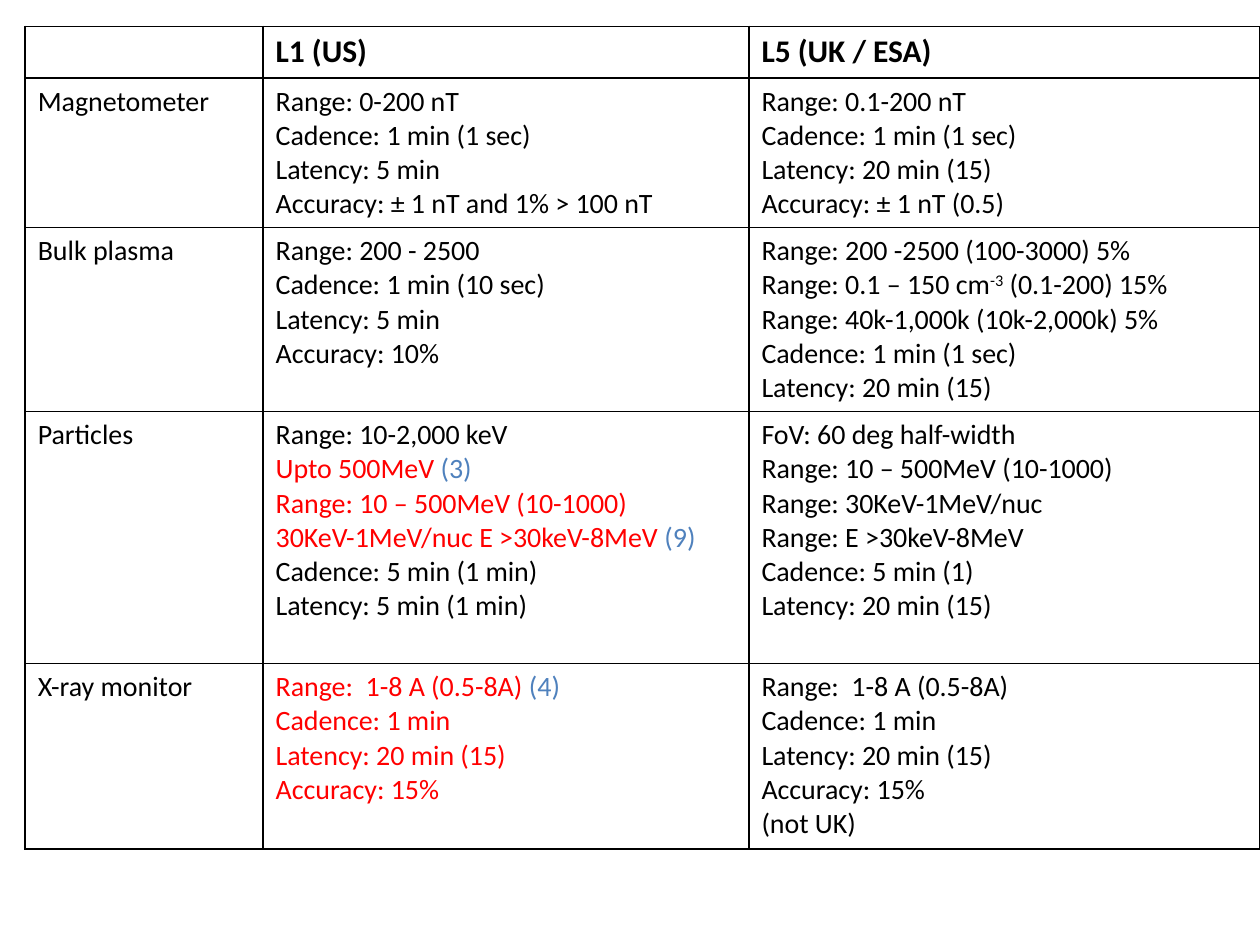
from dataclasses import dataclass

import lxml.etree
import pptx
import pptx.dml.color
import pptx.oxml.ns
import pptx.util

Inches = pptx.util.Inches
Pt = pptx.util.Pt


@dataclass(frozen=True)
class Theme:
    """Colours, font and sizes of the slide."""
    text: str = "000000"
    changed: str = "FF0000"
    note: str = "4F81BD"
    cell: str = "FFFFFF"
    border: str = "000000"
    font: str = "Calibri"
    header_pt: int = 18
    body_pt: int = 16
    border_pt: int = 1
    superscript: str = "30000"


THEME = Theme()
COLUMN_WIDTHS = [1.89, 3.86, 4.06]
ROW_HEIGHTS = [0.41, 1.18, 1.46, 2, 1.47]


def changed(text, note=None):
    """Return the runs of a changed line and its optional note."""
    runs = [(text, THEME.changed, False)]
    return runs + [(note, THEME.note, False)] if note else runs


HEADER = [[], ["L1 (US)"], ["L5 (UK / ESA)"]]
INSTRUMENTS = [
    [
        ["Magnetometer"],
        ["Range: 0-200 nT", "Cadence: 1 min (1 sec)", "Latency: 5 min",
         "Accuracy: ± 1 nT and 1% > 100 nT"],
        ["Range: 0.1-200 nT", "Cadence: 1 min (1 sec)",
         "Latency: 20 min (15)", "Accuracy: ± 1 nT (0.5)"],
    ],
    [
        ["Bulk plasma"],
        ["Range: 200 - 2500", "Cadence: 1 min (10 sec)", "Latency: 5 min",
         "Accuracy: 10%"],
        ["Range: 200 -2500 (100-3000) 5%",
         [("Range: 0.1 – 150 cm", THEME.text, False),
          ("-3", THEME.text, True),
          (" (0.1-200) 15%", THEME.text, False)],
         "Range: 40k-1,000k (10k-2,000k) 5%",
         "Cadence: 1 min (1 sec)", "Latency: 20 min (15)"],
    ],
    [
        ["Particles"],
        ["Range: 10-2,000 keV",
         changed("Upto 500MeV ", "(3)"),
         changed("Range: 10 – 500MeV (10-1000) 30KeV-1MeV/nuc E >30keV-8MeV ",
                 "(9)"),
         "Cadence: 5 min (1 min)", "Latency: 5 min (1 min)"],
        ["FoV: 60 deg half-width", "Range: 10 – 500MeV (10-1000)",
         "Range: 30KeV-1MeV/nuc", "Range: E >30keV-8MeV",
         "Cadence: 5 min (1)", "Latency: 20 min (15)"],
    ],
    [
        ["X-ray monitor"],
        [changed("Range:  1-8 A (0.5-8A) ", "(4)"), changed("Cadence: 1 min"),
         changed("Latency: 20 min (15)"), changed("Accuracy: 15%")],
        ["Range:  1-8 A (0.5-8A)", "Cadence: 1 min", "Latency: 20 min (15)",
         "Accuracy: 15%", "(not UK)"],
    ],
]


def style_cell(cell):
    """Give a cell its four borders and its fill."""
    qn = pptx.oxml.ns.qn
    tc_pr = cell._tc.get_or_add_tcPr()
    for side in ("a:lnL", "a:lnR", "a:lnT", "a:lnB"):
        ln = lxml.etree.SubElement(tc_pr, qn(side),
                                   w=str(Pt(THEME.border_pt)))
        fill = lxml.etree.SubElement(ln, qn("a:solidFill"))
        lxml.etree.SubElement(fill, qn("a:srgbClr"), val=THEME.border)
    cell.fill.solid()
    cell.fill.fore_color.rgb = pptx.dml.color.RGBColor.from_string(THEME.cell)


def write_lines(tf, lines, size, bold):
    """Write each line as a paragraph, run by run."""
    for i, line in enumerate(lines):
        p = tf.paragraphs[0] if i == 0 else tf.add_paragraph()
        runs = [(line, THEME.text, False)] if isinstance(line, str) else line
        for text, color, raised in runs:
            r = p.add_run()
            r.text = text
            r.font.name = THEME.font
            r.font.size = Pt(size)
            r.font.bold = bold
            r.font.color.rgb = pptx.dml.color.RGBColor.from_string(color)
            if raised:
                r._r.get_or_add_rPr().set("baseline", THEME.superscript)


def add_requirements_table(slide, left, top, width, height):
    """Place the instrument requirements table in the given box."""
    rows = [HEADER] + INSTRUMENTS
    table = slide.shapes.add_table(len(rows), len(HEADER), left, top,
                                   width, height).table
    table.first_row = False
    table.horz_banding = False
    for column, share in zip(table.columns, COLUMN_WIDTHS):
        column.width = int(width * share / sum(COLUMN_WIDTHS))
    for row, share in zip(table.rows, ROW_HEIGHTS):
        row.height = int(height * share / sum(ROW_HEIGHTS))
    for i, row in enumerate(rows):
        size = THEME.body_pt if i else THEME.header_pt
        for j, lines in enumerate(row):
            cell = table.cell(i, j)
            style_cell(cell)
            write_lines(cell.text_frame, lines, size, i == 0)


def main():
    """Build the slide and save it."""
    prs = pptx.Presentation()
    prs.slide_width = Inches(10)
    prs.slide_height = Inches(7.5)
    slide = prs.slides.add_slide(prs.slide_layouts[6])
    add_requirements_table(slide, Inches(0.2), Inches(0.21),
                           Inches(9.8), Inches(6.52))
    prs.save("out.pptx")


if __name__ == "__main__":
    main()
